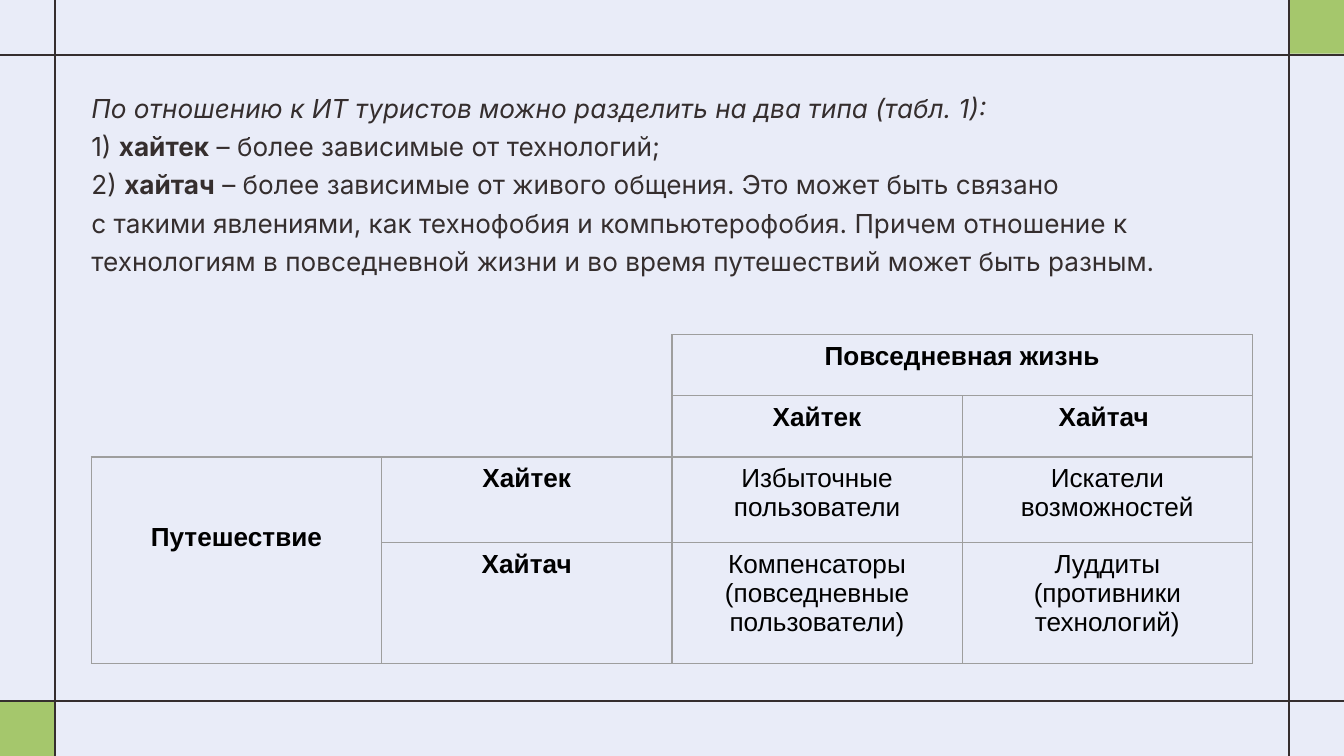
from lxml.etree import SubElement
from pptx import Presentation
from pptx.dml.color import RGBColor
from pptx.enum.shapes import MSO_CONNECTOR, MSO_SHAPE
from pptx.enum.text import MSO_ANCHOR, MSO_AUTO_SIZE, PP_ALIGN
from pptx.oxml.ns import qn
from pptx.util import Inches, Pt

PALE = RGBColor(0xE9, 0xEC, 0xF8)
GREEN = RGBColor(0xA5, 0xC7, 0x6C)
DARK = RGBColor(0x35, 0x2E, 0x2E)
GREY = RGBColor(0x9E, 0x9E, 0x9E)
BLACK = RGBColor(0, 0, 0)

WIDE = 10
HIGH = WIDE * 9 / 16
EDGE = 0.41

INTRO = [
    [("По отношению к ИТ туристов можно разделить на два типа (табл. 1):", {"italic": True})],
    [("1) ", {}), ("хайтек", {"bold": True}), (" – более зависимые от технологий;", {})],
    [("2) ", {}), ("хайтач", {"bold": True}),
     (" – более зависимые от живого общения. Это может быть связано", {})],
    [("с такими явлениями, как технофобия и компьютерофобия. Причем отношение к", {})],
    [("технологиям в повседневной жизни и во время путешествий может быть разным.", {})],
]
GRID = [
    ["", "", "Повседневная жизнь", ""],
    ["", "", "Хайтек", "Хайтач "],
    ["Путешествие", "Хайтек", "Избыточные пользователи", "Искатели возможностей"],
    ["", "Хайтач", "Компенсаторы\n(повседневные\nпользователи)", "Луддиты\n(противники технологий)"],
]
SPANS = [((0, 0), (0, 1)), ((0, 2), (0, 3)), ((1, 0), (1, 1)), ((2, 0), (3, 0))]
COLS = [Inches(2.16)] * 4
ROWS = [Pt(32.8), Pt(32.8), Pt(45.8), Pt(64.8)]


def write(para, text, font="Inter", size=14, color=DARK, bold=False, italic=False):
    run = para.add_run()
    run.text = text
    face = run.font
    face.name, face.size, face.bold, face.italic = font, Pt(size), bold, italic
    face.color.rgb = color


def border(cell, sides):
    """Draw the given sides of the cell and clear the others."""
    props = cell._tc.get_or_add_tcPr()
    for side in "LRTB":
        line = SubElement(props, qn(f"a:ln{side}"), w=str(Pt(0.75)))
        if side in sides:
            fill = SubElement(line, qn("a:solidFill"))
            SubElement(fill, qn("a:srgbClr"), val=str(GREY))
        else:
            SubElement(line, qn("a:noFill"))


class Page:
    def __init__(self, slide):
        self.slide = slide
        self.shapes = slide.shapes
        fill = slide.background.fill
        fill.solid()
        fill.fore_color.rgb = PALE

    def square(self, left, top, side=0.46):
        box = self.shapes.add_shape(MSO_SHAPE.RECTANGLE, Inches(left), Inches(top),
                                    Inches(side), Inches(side))
        box.shadow.inherit = False
        box.fill.solid()
        box.fill.fore_color.rgb = GREEN
        box.line.fill.background()

    def line(self, x1, y1, x2, y2):
        rule = self.shapes.add_connector(MSO_CONNECTOR.STRAIGHT, Inches(x1), Inches(y1),
                                         Inches(x2), Inches(y2))
        rule.line.color.rgb = DARK
        rule.line.width = Pt(0.75)
        SubElement(rule._element.spPr, qn("a:effectLst"))

    def body(self, paras, left, top, width, height):
        box = self.slide.placeholders[1]
        box.left, box.top = Inches(left), Inches(top)
        box.width, box.height = Inches(width), Inches(height)
        frame = box.text_frame
        frame.word_wrap = True
        frame.auto_size = MSO_AUTO_SIZE.NONE
        frame.vertical_anchor = MSO_ANCHOR.TOP
        frame.margin_left = frame.margin_right = Inches(0.1)
        frame.margin_top = frame.margin_bottom = Inches(0.1)
        for i, runs in enumerate(paras):
            para = frame.paragraphs[0] if i == 0 else frame.add_paragraph()
            para.line_spacing = 0.5
            para.space_before, para.space_after = Pt(0), Pt(12)
            props = para._p.get_or_add_pPr()
            props.set("marL", "0")
            props.set("indent", "0")
            SubElement(props, qn("a:buNone"))
            for text, style in runs:
                write(para, text, **style)

    def table(self, grid, left, top):
        frame = self.shapes.add_table(len(ROWS), len(COLS), Inches(left), Inches(top),
                                      sum(COLS), sum(ROWS))
        table = frame.table
        table.first_row = table.horz_banding = False
        for col, width in zip(table.columns, COLS):
            col.width = width
        for row, height in zip(table.rows, ROWS):
            row.height = height
        for start, end in SPANS:
            table.cell(*start).merge(table.cell(*end))
        for r, row in enumerate(grid):
            for c, text in enumerate(row):
                self.cell(table.cell(r, c), text, r, c)
        table.cell(2, 0).margin_top = Inches(0.49)

    def cell(self, cell, text, r, c):
        head = r < 2 or c < 2
        if r < 2 and c < 2:
            border(cell, ("R" if c == 1 else "") + ("B" if r == 1 else ""))
        else:
            border(cell, "LRTB")
        cell.fill.background()
        for i, part in enumerate(text.split("\n") if text else []):
            para = cell.text_frame.paragraphs[0] if i == 0 else cell.text_frame.add_paragraph()
            para.alignment = PP_ALIGN.CENTER
            write(para, part, font="Arial", color=BLACK, bold=head)


def main():
    deck = Presentation()
    deck.slide_width, deck.slide_height = Inches(WIDE), Inches(HIGH)
    slide = deck.slides.add_slide(deck.slide_layouts[1])
    title = slide.shapes.title.element
    title.getparent().remove(title)

    page = Page(slide)
    page.square(WIDE - EDGE, -0.06)
    page.square(-0.05, HIGH - EDGE)
    for x in (EDGE, WIDE - EDGE):
        page.line(x, -0.06, x, 5.66)
    for y in (EDGE, HIGH - EDGE):
        page.line(-0.05, y, 10.05, y)
    page.body(INTRO, 0.58, 0.69, 8.85, 1.62)
    page.table(GRID, 0.68, 2.49)
    deck.save("out.pptx")


if __name__ == "__main__":
    main()
